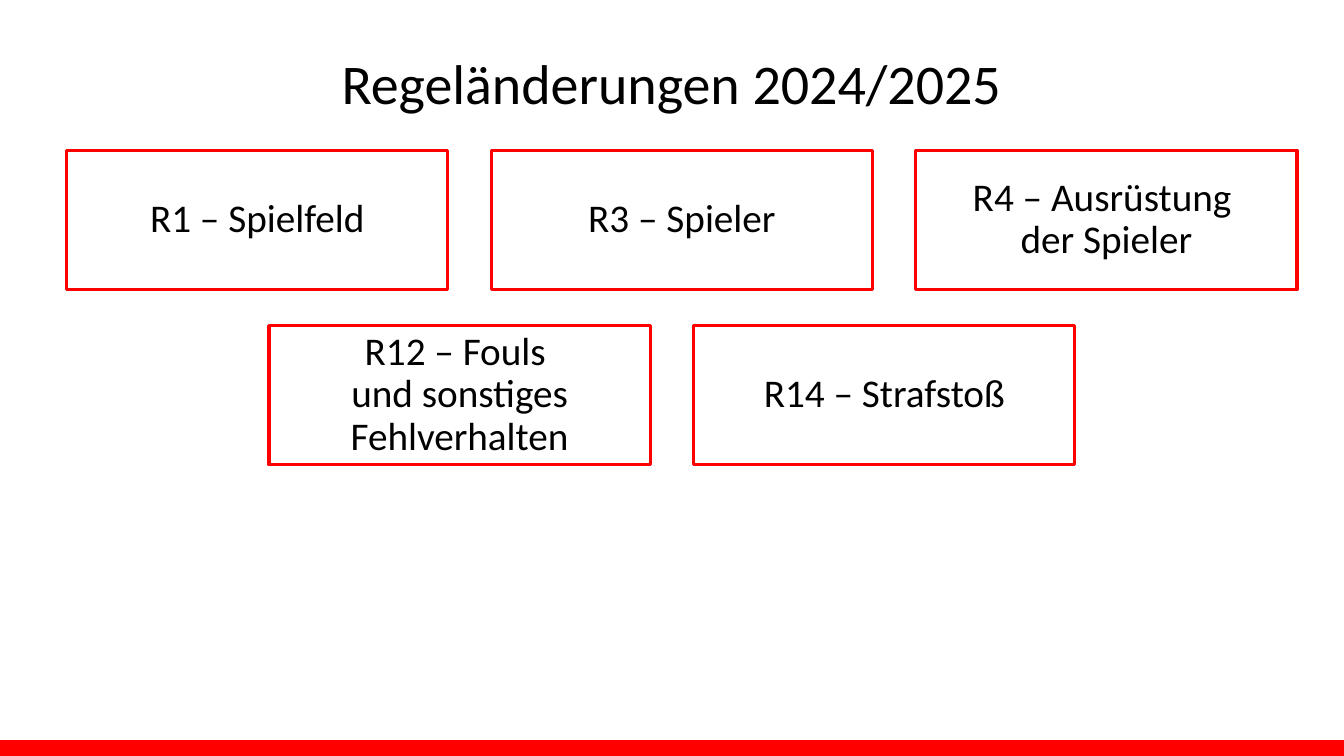
from pptx import Presentation
from pptx.dml.color import RGBColor
from pptx.enum.shapes import MSO_SHAPE
from pptx.enum.text import MSO_ANCHOR, MSO_AUTO_SIZE, PP_ALIGN
from pptx.util import Pt

HUES = {"red": "FF0000", "ink": "000000"}
WIDE, HIGH = 960, 540
BOX_W, BOX_H, STEP = 272.2, 99.4, 303.3
ROWS = [
    (47.6, 107.4, ["R1 – Spielfeld", "R3 – Spieler", "R4 – Ausrüstung \nder Spieler"]),
    (192.2, 232.6, ["R12 – Fouls \nund sonstiges Fehlverhalten", "R14 – Strafstoß"]),
]


class Deck:
    """Holds the text style and the current slide."""

    def __init__(self, slide):
        self.slide = slide
        self.face = "Calibri"

    def hue(self, name):
        return RGBColor.from_string(HUES[name])

    def label(self, shape, text, size, anchor):
        frame = shape.text_frame
        frame.word_wrap = True
        frame.auto_size = MSO_AUTO_SIZE.NONE
        frame.vertical_anchor = anchor
        line = frame.paragraphs[0]
        line.text = text
        line.alignment = PP_ALIGN.CENTER
        line.line_spacing = 0.9
        line.space_before = Pt(0)
        for run in line.runs:
            run.font.name = self.face
            run.font.size = Pt(size)
            run.font.color.rgb = self.hue("ink")

    def title(self, text, x, y, w, h):
        shape = self.slide.shapes.title
        shape.left, shape.top = Pt(x), Pt(y)
        shape.width, shape.height = Pt(w), Pt(h)
        self.label(shape, text, 40, MSO_ANCHOR.TOP)

    def rect(self, x, y, w, h, edge):
        shape = self.slide.shapes.add_shape(
            MSO_SHAPE.RECTANGLE, Pt(x), Pt(y), Pt(w), Pt(h))
        shape.shadow.inherit = False
        shape.line.color.rgb = self.hue("red")
        shape.line.width = Pt(edge)
        return shape

    def band(self, h):
        shape = self.rect(0, HIGH - h, WIDE, h, 1)
        shape.fill.solid()
        shape.fill.fore_color.rgb = self.hue("red")

    def box(self, text, x, y):
        shape = self.rect(x, y, BOX_W, BOX_H, 2.25)
        shape.fill.background()
        self.label(shape, text, 28, MSO_ANCHOR.MIDDLE)


def main():
    show = Presentation()
    show.slide_width, show.slide_height = Pt(WIDE), Pt(HIGH)
    deck = Deck(show.slides.add_slide(show.slide_layouts[5]))
    deck.band(10.8)
    deck.title("Regeländerungen 2024/2025", 46.1, 36.7, 866.9, 49)
    for left, top, rules in ROWS:
        for col, rule in enumerate(rules):
            deck.box(rule, left + col * STEP, top)
    show.save("out.pptx")


if __name__ == "__main__":
    main()
